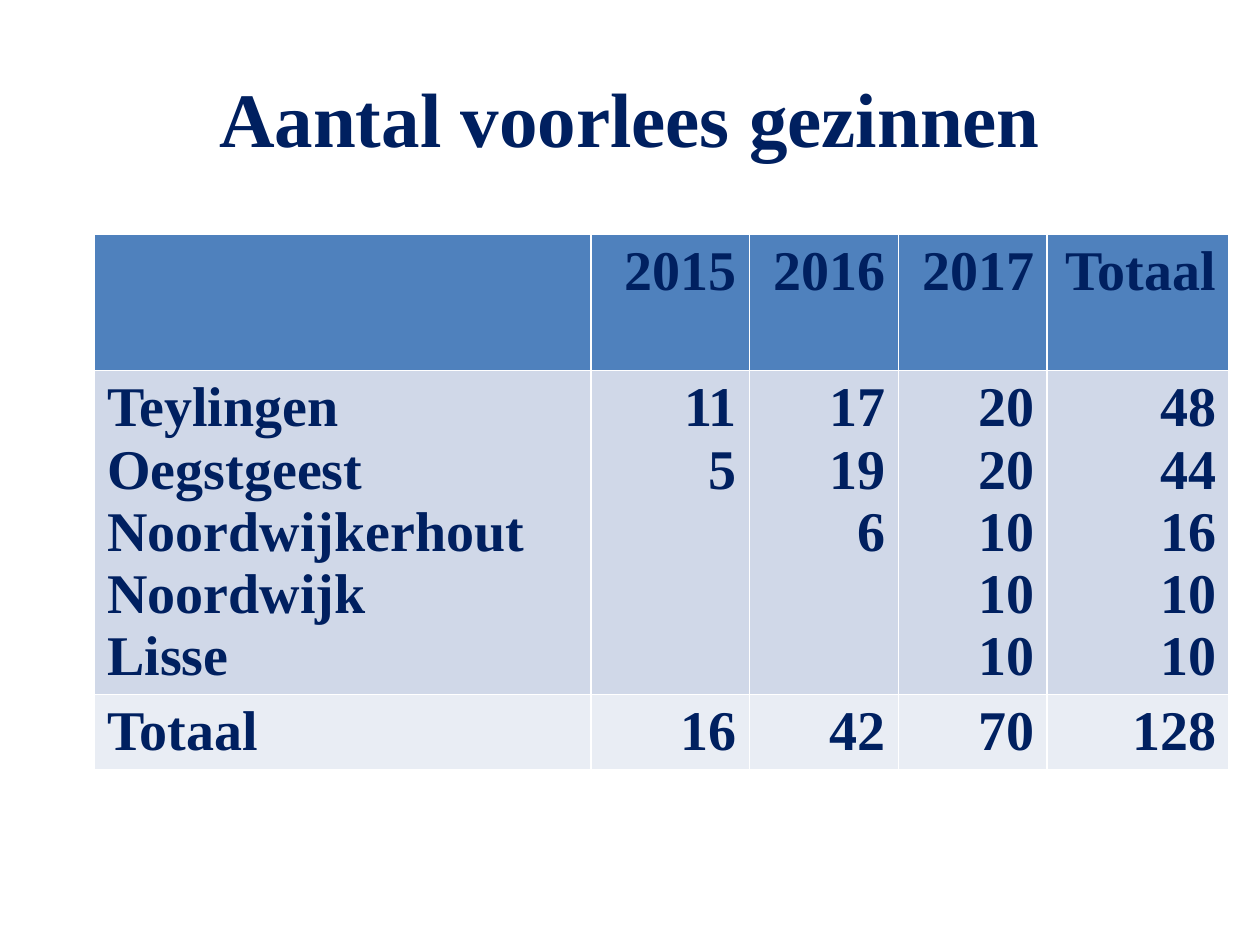
from dataclasses import dataclass

from pptx import Presentation
from pptx.dml.color import RGBColor
from pptx.enum.text import MSO_ANCHOR, PP_ALIGN
from pptx.util import Cm, Pt

LEFT, MID, RIGHT = PP_ALIGN.LEFT, PP_ALIGN.CENTER, PP_ALIGN.RIGHT
MIDDLE = MSO_ANCHOR.MIDDLE
FACE = "Times New Roman"
NAVY = "002060"
WIDTHS = (10, 3.2, 3, 3, 3.66)


@dataclass
class Row:
    height: float
    fill: str
    cells: tuple[str, ...]


ROWS = (
    Row(2.74, "4F81BD", ("", "2015", "2016", "2017", "Totaal")),
    Row(6.53, "D0D8E8", (
        "Teylingen\nOegstgeest\nNoordwijkerhout\nNoordwijk\nLisse",
        "11\n5",
        "17\n19\n6",
        "20\n20\n10\n10\n10",
        "48\n44\n16\n10\n10",
    )),
    Row(1.49, "E9EDF4", ("Totaal", "16", "42", "70", "128")),
)


def color(code: str) -> RGBColor:
    return RGBColor.from_string(code)


def write(frame, text: str, size: float, align) -> None:
    """Fill a text frame with one paragraph per line, in bold navy."""
    frame.text = text
    for para in frame.paragraphs:
        para.alignment = align
        font = para.font
        font.name, font.size, font.bold = FACE, Pt(size), True
        font.color.rgb = color(NAVY)


def add_title(slide, text: str) -> None:
    title = slide.shapes.title
    title.left, title.top = Cm(1.27), Cm(0.76)
    title.width, title.height = Cm(22.86), Cm(3.18)
    title.text_frame.vertical_anchor = MIDDLE
    write(title.text_frame, text, 44, MID)


def add_grid(slide, rows: tuple[Row, ...]) -> None:
    """Add the table; its default style draws the white borders."""
    high = sum(row.height for row in rows)
    table = slide.shapes.add_table(
        len(rows), len(WIDTHS), Cm(1.91), Cm(4.73), Cm(sum(WIDTHS)), Cm(high)
    ).table
    for col, width in zip(table.columns, WIDTHS):
        col.width = Cm(width)
    for line, row in zip(table.rows, rows):
        line.height = Cm(row.height)
        for i, (cell, text) in enumerate(zip(line.cells, row.cells)):
            cell.fill.solid()
            cell.fill.fore_color.rgb = color(row.fill)
            if text:
                write(cell.text_frame, text, 32, RIGHT if i else LEFT)


def main() -> None:
    deck = Presentation()
    deck.slide_width, deck.slide_height = Cm(25.4), Cm(19.05)
    slide = deck.slides.add_slide(deck.slide_layouts[5])
    add_title(slide, "Aantal voorlees gezinnen")
    add_grid(slide, ROWS)
    deck.save("out.pptx")


if __name__ == "__main__":
    main()
